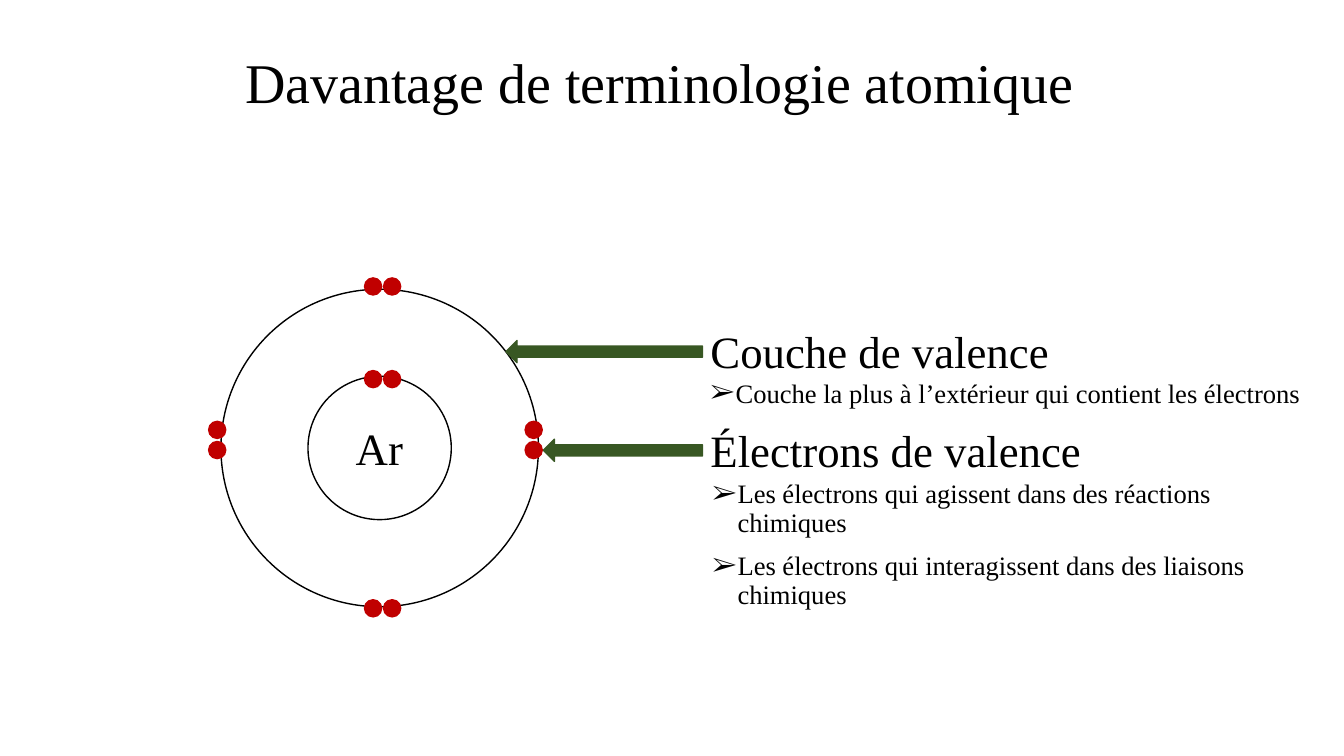
from itertools import product
from lxml.etree import SubElement
from pptx import Presentation
from pptx.dml.color import RGBColor
from pptx.enum.shapes import MSO_SHAPE as Shape
from pptx.enum.text import MSO_ANCHOR as Anchor, MSO_AUTO_SIZE as AutoSize, PP_ALIGN as Align
from pptx.oxml.ns import qn
from pptx.util import Pt

COLORS = {"text": "000000", "electron": "C00000", "arrow": "385723"}
FONT = "Times New Roman"

TITLE = ("Davantage de terminologie atomique", (56.9, 8.6, 828, 104.4))
LABELS = [
    ("Ar", (247, 297, 49, 46)),
    ("Couche de valence", (500.4, 227.6, 259.2, 46)),
    ("Électrons de valence", (500.4, 298.4, 282.2, 46)),
]
DEFINITIONS = [
    (["Couche la plus à l’extérieur qui contient les électrons"], (500.4, 268, 459.6, 32.4)),
    (["Les électrons qui agissent dans des réactions chimiques",
      "Les électrons qui interagissent dans des liaisons chimiques"], (501.8, 340, 452, 173.5)),
]

CENTER = (271.2, 320)
SHELL_RADII = [51.2, 113.4]
ELECTRON_SIZE = 12.24
PAIR_LEFTS, PAIR_ROWS = (260.4, 274), (198.5, 264.7, 428.4)
SIDE_COLUMNS, SIDE_TOPS = (149.04, 375.12), (300.96, 315.36)

ARROW_RIGHT, ARROW_HEIGHT = 501.8, 15.84
ARROWS = [(361.4, 243.2), (388.1, 313.7)]


def rgb(name):
    return RGBColor.from_string(COLORS[name])


def add_shape(page, kind, place, line, fill=None):
    shape = page.shapes.add_shape(kind, *map(Pt, place))
    shape.shadow.inherit = False
    if fill:
        shape.fill.solid()
        shape.fill.fore_color.rgb = rgb(fill)
    else:
        shape.fill.background()
    shape.line.color.rgb = rgb(line)
    shape.line.width = Pt(1)


def add_bullet(para):
    props = para._p.get_or_add_pPr()
    props.set("marL", str(Pt(18)))
    props.set("indent", str(Pt(-18)))
    SubElement(props, qn("a:buFont"), typeface=FONT)
    SubElement(props, qn("a:buChar"), char="➢")


def add_text(page, lines, place, size, wrap=True, bullets=False, spacing=None, align=Align.LEFT, anchor=Anchor.TOP):
    box = page.shapes.add_textbox(*map(Pt, place))
    frame = box.text_frame
    frame.word_wrap = wrap
    frame.auto_size = AutoSize.NONE if wrap else AutoSize.SHAPE_TO_FIT_TEXT
    frame.vertical_anchor = anchor
    for index, line in enumerate(lines):
        para = frame.add_paragraph() if index else frame.paragraphs[0]
        if bullets:
            add_bullet(para)
        para.alignment = align
        if spacing:
            para.line_spacing = spacing
        if index:
            para.space_before = Pt(10)
        span = para.add_run()
        span.text = line
        span.font.name = FONT
        span.font.size = Pt(size)
        span.font.color.rgb = rgb("text")


def main():
    deck = Presentation()
    deck.slide_width, deck.slide_height = Pt(960), Pt(540)
    page = deck.slides.add_slide(deck.slide_layouts[6])

    title, title_place = TITLE
    add_text(page, [title], title_place, 40, spacing=0.9, align=Align.CENTER, anchor=Anchor.MIDDLE)

    for radius in SHELL_RADII:
        left, top = (middle - radius for middle in CENTER)
        add_shape(page, Shape.OVAL, (left, top, 2 * radius, 2 * radius), "text")

    electrons = [*product(PAIR_LEFTS, PAIR_ROWS), *product(SIDE_COLUMNS, SIDE_TOPS)]
    for left, top in electrons:
        add_shape(page, Shape.OVAL, (left, top, ELECTRON_SIZE, ELECTRON_SIZE), "electron", "electron")

    for left, top in ARROWS:
        add_shape(page, Shape.LEFT_ARROW, (left, top, ARROW_RIGHT - left, ARROW_HEIGHT), "arrow", "arrow")

    for label, place in LABELS:
        add_text(page, [label], place, 32, wrap=False)
    for lines, place in DEFINITIONS:
        add_text(page, lines, place, 19, bullets=True, spacing=0.9)

    deck.save("out.pptx")


if __name__ == "__main__":
    main()
